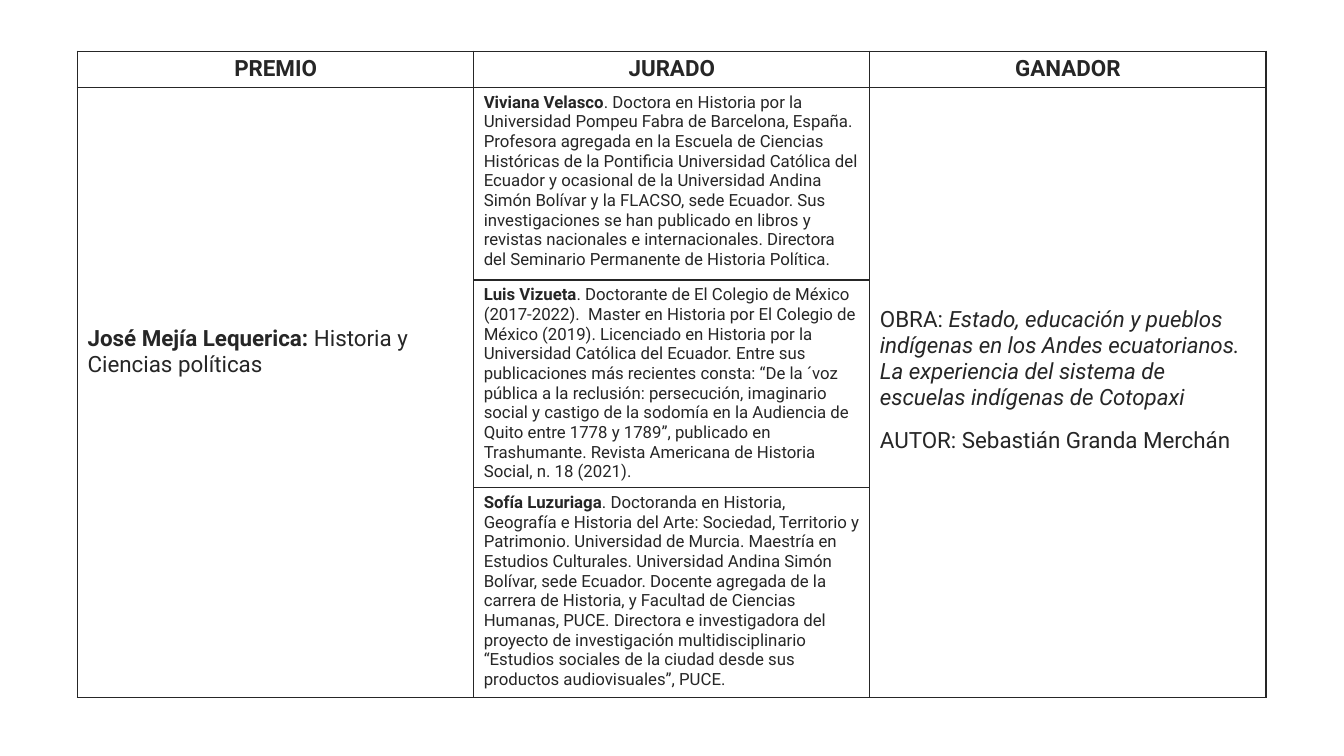
from dataclasses import dataclass

from lxml.etree import SubElement
from pptx import Presentation
from pptx.dml.color import RGBColor
from pptx.enum.text import MSO_ANCHOR as Anchor, PP_ALIGN as Align
from pptx.oxml.ns import qn
from pptx.util import Pt

HEADERS = ["PREMIO", "JURADO", "GANADOR"]
PRIZE = [[("José Mejía Lequerica: ", "bold"), ("Historia y Ciencias políticas", "")]]
WINNER = [
    [("OBRA: ", ""),
     ("Estado, educación y pueblos indígenas en los Andes ecuatorianos. "
      "La experiencia del sistema de escuelas indígenas de Cotopaxi", "italic")],
    [("AUTOR: Sebastián Granda Merchán", "")],
]
JURY = [
    ("Viviana Velasco",
     ". Doctora en Historia por la Universidad Pompeu Fabra de Barcelona, España. "
     "Profesora agregada en la Escuela de Ciencias Históricas de la Pontificia "
     "Universidad Católica del Ecuador y ocasional de la Universidad Andina Simón "
     "Bolívar y la FLACSO, sede Ecuador. Sus investigaciones se han publicado en "
     "libros y revistas nacionales e internacionales. Directora del Seminario "
     "Permanente de Historia Política."),
    ("Luis Vizueta",
     ". Doctorante de El Colegio de México (2017-2022).  Master en Historia por El "
     "Colegio de México (2019). Licenciado en Historia por la Universidad Católica "
     "del Ecuador. Entre sus publicaciones más recientes consta: “De la ´voz pública "
     "a la reclusión: persecución, imaginario social y castigo de la sodomía en la "
     "Audiencia de Quito entre 1778 y 1789”, publicado en Trashumante. Revista "
     "Americana de Historia Social, n. 18 (2021)."),
    ("Sofía Luzuriaga",
     ". Doctoranda en Historia, Geografía e Historia del Arte: Sociedad, Territorio "
     "y Patrimonio. Universidad de Murcia. Maestría en Estudios Culturales. "
     "Universidad Andina Simón Bolívar, sede Ecuador. Docente agregada de la carrera "
     "de Historia, y Facultad de Ciencias Humanas, PUCE. Directora e investigadora "
     "del proyecto de investigación multidisciplinario “Estudios sociales de la "
     "ciudad desde sus productos audiovisuales”, PUCE."),
]


@dataclass(frozen=True)
class Theme:
    font: str = "Roboto"
    ink: str = "262626"
    large: float = 16
    small: float = 12
    border: float = 1
    gap: float = 12


THEME = Theme()
LEFT, TOP = 55.4, 36.5
COLUMN_WIDTH = 283
ROW_HEIGHTS = [26, 137.5, 148.5, 150]
PRIZE_LIFT, WINNER_LIFT = 62, 21.5


def write(cell, paragraphs, size, align=Align.LEFT):
    frame = cell.text_frame
    for index, runs in enumerate(paragraphs):
        para = frame.add_paragraph() if index else frame.paragraphs[0]
        para.alignment = align
        para.font.name = THEME.font
        para.font.size = Pt(size)
        para.font.color.rgb = RGBColor.from_string(THEME.ink)
        if index < len(paragraphs) - 1:
            para.space_after = Pt(THEME.gap)
        for text, style in runs:
            span = para.add_run()
            span.text = text
            span.font.name = THEME.font
            span.font.size = Pt(size)
            span.font.color.rgb = RGBColor.from_string(THEME.ink)
            span.font.bold = style == "bold"
            span.font.italic = style == "italic"


def outline(cell):
    properties = cell._tc.get_or_add_tcPr()
    for side in ("lnL", "lnR", "lnT", "lnB"):
        line = SubElement(properties, qn(f"a:{side}"), w=str(Pt(THEME.border)))
        fill = SubElement(line, qn("a:solidFill"))
        SubElement(fill, qn("a:srgbClr"), val=THEME.ink)
    cell.fill.background()


def main():
    deck = Presentation()
    deck.slide_width, deck.slide_height = Pt(960), Pt(540)
    page = deck.slides.add_slide(deck.slide_layouts[6])
    table = page.shapes.add_table(
        len(ROW_HEIGHTS), len(HEADERS), Pt(LEFT), Pt(TOP),
        Pt(COLUMN_WIDTH * len(HEADERS)), Pt(sum(ROW_HEIGHTS))).table
    table.first_row = table.horz_banding = False
    for column in table.columns:
        column.width = Pt(COLUMN_WIDTH)
    for row, height in zip(table.rows, ROW_HEIGHTS):
        row.height = Pt(height)
    for cell in table.iter_cells():
        outline(cell)

    for index, header in enumerate(HEADERS):
        write(table.cell(0, index), [[(header, "bold")]], THEME.large, Align.CENTER)
    for index, (name, profile) in enumerate(JURY, 1):
        write(table.cell(index, 1), [[(name, "bold"), (profile, "")]], THEME.small)
    for column, content, lift in ((0, PRIZE, PRIZE_LIFT), (2, WINNER, WINNER_LIFT)):
        cell = table.cell(1, column)
        cell.merge(table.cell(len(JURY), column))
        cell.vertical_anchor = Anchor.MIDDLE
        cell.margin_bottom = Pt(lift)
        write(cell, content, THEME.large)
    deck.save("out.pptx")


if __name__ == "__main__":
    main()
